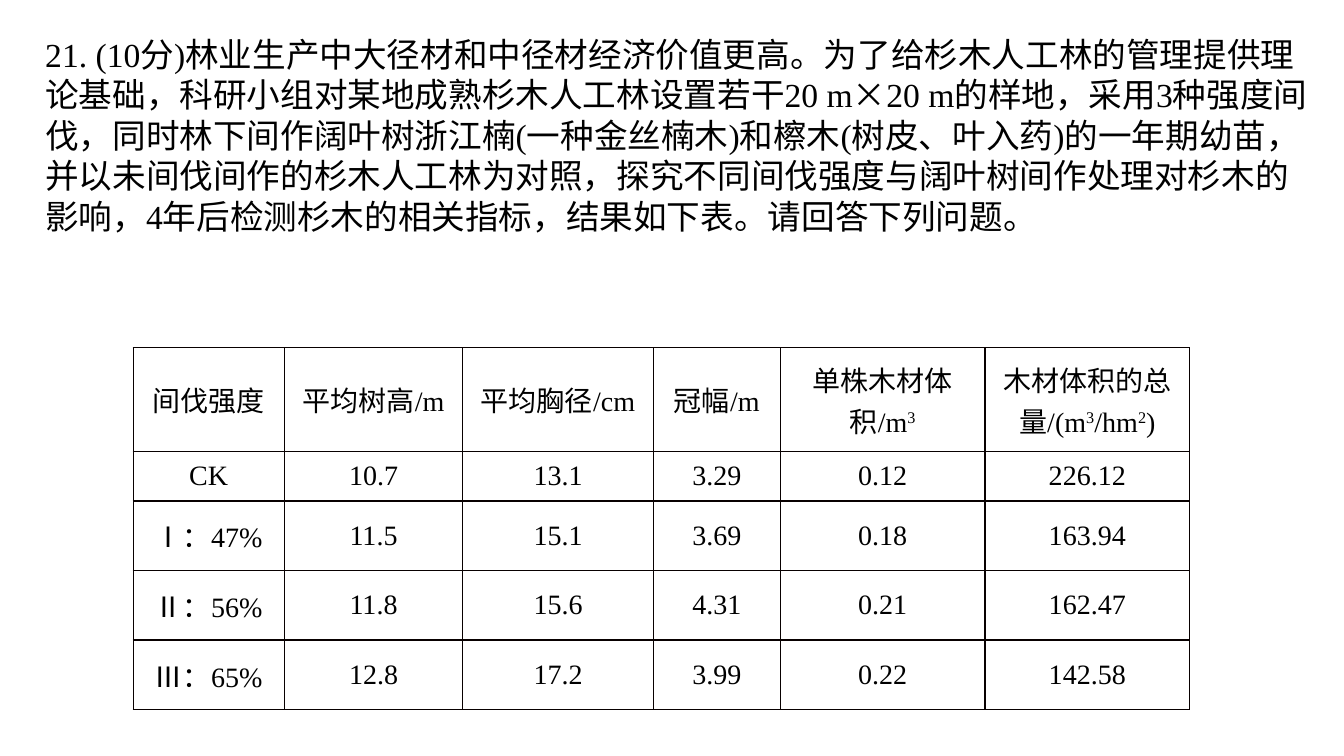
import pptx
import pptx.util
import pptx.dml.color
import pptx.enum.text
import pptx.oxml
import pptx.oxml.ns
import lxml.etree

Inches = pptx.util.Inches
Pt = pptx.util.Pt
qn = pptx.oxml.ns.qn

COLORS = {"text": "000000", "border": "080000"}
SERIF, SANS, CJK = "Times New Roman", "Arial", "Noto Sans CJK SC"

QUESTION = [
    ("21. (10", SERIF), ("分", SANS), (")", SERIF),
    ("林业生产中大径材和中径材经济价值更高。为了给杉木人工林的管理提供理论基础，"
     "科研小组对某地成熟杉木人工林设置若干", SANS),
    ("20 m", SERIF), ("×", CJK), ("20 m", SERIF),
    ("的样地，采用", SANS), ("3", SERIF),
    ("种强度间伐，同时林下间作阔叶树浙江楠", SANS),
    ("(", SERIF), ("一种金丝楠木", SANS), (")", SERIF),
    ("和檫木", SANS),
    ("(", SERIF), ("树皮、叶入药", SANS), (")", SERIF),
    ("的一年期幼苗，并以未间伐间作的杉木人工林为对照，"
     "探究不同间伐强度与阔叶树间作处理对杉木的影响，", SANS),
    ("4", SERIF),
    ("年后检测杉木的相关指标，结果如下表。请回答下列问题。", SANS),
]

# A cell is a string, or a list of (text, format) spans.
RAISED = {"raised": True}
HEADER = [
    "间伐强度", "平均树高/m", "平均胸径/cm", "冠幅/m",
    [("单株木材体积/m", {}), ("3", RAISED)],
    [("木材体积的总量/(m", {}), ("3", RAISED), ("/hm", {}), ("2", RAISED), (")", {})],
]


def treatment(numeral, share):
    return [(numeral, {"font": CJK}), (f"：{share}", {})]


ROWS = [
    HEADER,
    ["CK", "10.7", "13.1", "3.29", "0.12", "226.12"],
    [treatment("Ⅰ", "47%"), "11.5", "15.1", "3.69", "0.18", "163.94"],
    [treatment("Ⅱ", "56%"), "11.8", "15.6", "4.31", "0.21", "162.47"],
    [treatment("Ⅲ", "65%"), "12.8", "17.2", "3.99", "0.22", "142.58"],
]
COLUMN_WIDTHS = [1.5, 1.77, 1.89, 1.26, 2.03, 2.03]
ROW_HEIGHTS = [1.03, 0.49, 0.69, 0.69, 0.69]


def add_span(para, text, *, size=20, font=SERIF, color="text", raised=False):
    span = para.add_run()
    span.text = text
    span.font.size = Pt(size)
    span.font.name = font
    span.font.color.rgb = pptx.dml.color.RGBColor.from_string(COLORS[color])
    properties = span.font._element
    lxml.etree.SubElement(properties, qn("a:ea")).set("typeface", CJK)
    if raised:
        properties.set("baseline", "30000")


def add_question(page):
    box = page.shapes.add_textbox(Inches(0.35), Inches(0.28), Inches(12.79), Inches(3.58))
    box.text_frame.word_wrap = True
    para = box.text_frame.paragraphs[0]
    para.line_spacing = Pt(29)
    for text, font in QUESTION:
        add_span(para, text, size=24, font=font)


def add_borders(cell, color="border", width=1):
    properties = cell._tc.get_or_add_tcPr()
    for position, side in enumerate(("a:lnL", "a:lnR", "a:lnT", "a:lnB")):
        line = lxml.etree.Element(qn(side), w=str(Pt(width)))
        fill = lxml.etree.SubElement(line, qn("a:solidFill"))
        lxml.etree.SubElement(fill, qn("a:srgbClr")).set("val", COLORS[color])
        properties.insert(position, line)


def fill_cell(cell, content):
    cell.fill.background()
    cell.vertical_anchor = pptx.enum.text.MSO_ANCHOR.MIDDLE
    cell.margin_left = cell.margin_right = Inches(0.07)
    cell.margin_top = cell.margin_bottom = 0
    para = cell.text_frame.paragraphs[0]
    para.alignment = pptx.enum.text.PP_ALIGN.CENTER
    spans = [(content, {})] if isinstance(content, str) else content
    for text, style in spans:
        add_span(para, text, **style)
    add_borders(cell)


def add_results(page):
    table = page.shapes.add_table(
        len(ROWS), len(HEADER), Inches(1.32), Inches(3.45),
        Inches(sum(COLUMN_WIDTHS)), Inches(sum(ROW_HEIGHTS))).table
    table.first_row = table.horz_banding = False
    for column, width in zip(table.columns, COLUMN_WIDTHS):
        column.width = Inches(width)
    for row, height, contents in zip(table.rows, ROW_HEIGHTS, ROWS):
        row.height = Inches(height)
        for cell, content in zip(row.cells, contents):
            fill_cell(cell, content)


def main():
    deck = pptx.Presentation()
    deck.slide_width, deck.slide_height = Inches(13.33), Inches(7.5)
    page = deck.slides.add_slide(deck.slide_layouts[6])
    add_question(page)
    add_results(page)
    deck.save("out.pptx")


if __name__ == "__main__":
    main()
